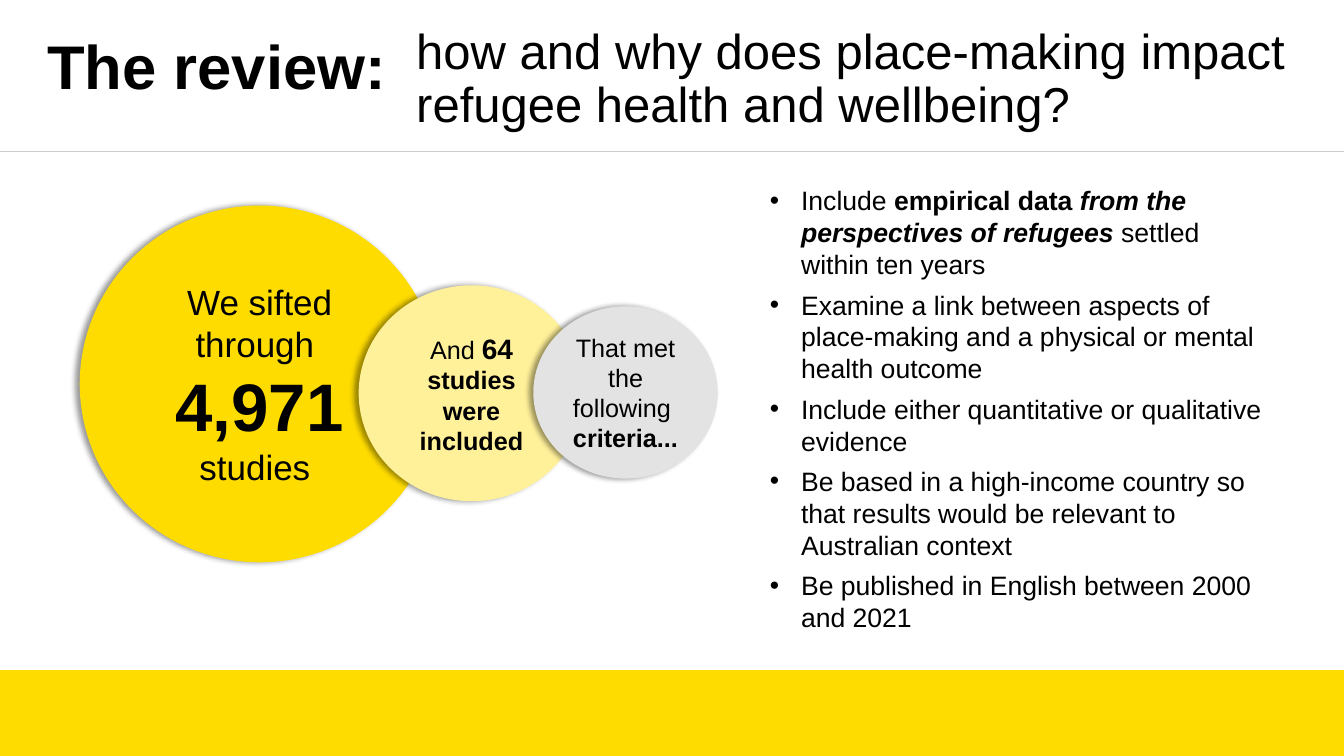
"""Build the slide that sums up how the review's studies were selected."""
from dataclasses import dataclass

import pptx
import pptx.dml.color
import pptx.enum.shapes
import pptx.enum.text
import pptx.oxml
import pptx.oxml.ns
import pptx.util
from pptx.util import Cm

ALIGN = pptx.enum.text.PP_ALIGN
ANCHOR = pptx.enum.text.MSO_ANCHOR
SHAPE = pptx.enum.shapes.MSO_SHAPE


@dataclass(frozen=True)
class Theme:
    """Colours and type sizes of the slide."""
    font: str = "Arial"
    text: str = "000000"
    yellow: str = "FFDC00"
    pale_yellow: str = "FFF199"
    grey: str = "E3E3E3"
    rule: str = "CCCCCC"
    title: int = 44
    subtitle: int = 35
    total: int = 48
    total_gap: int = 36
    large: int = 25
    count: int = 20
    small: int = 18
    body: int = 19


THEME = Theme()
WIDTH, HEIGHT = Cm(33.87), Cm(19.05)
BAND_HEIGHT = Cm(2.16)
RULE_TOP = Cm(3.81)


def colour(value):
    """Turn a hex string into a colour."""
    return pptx.dml.color.RGBColor.from_string(value)


def add_child(parent, tag, xml=""):
    """Append a drawing element with optional inner markup."""
    name = tag.split()[0]
    parent.append(pptx.oxml.parse_xml(
        f'<a:{tag} {pptx.oxml.ns.nsdecls("a")}>{xml}</a:{name}>'))


def add_bullet(paragraph, indent):
    """Give a paragraph a round bullet with a hanging indent."""
    properties = paragraph._p.get_or_add_pPr()
    properties.set("marL", str(indent))
    properties.set("indent", str(-indent))
    add_child(properties, 'buFont typeface="Arial"')
    add_child(properties, 'buChar char="•"')


def write_text(shape, paragraphs, size, bold=False, align=ALIGN.LEFT,
               anchor=ANCHOR.MIDDLE, line_spacing=None, space_before=0, bullet_indent=None):
    """Fill a shape with paragraphs, each a list of (text, format) runs."""
    frame = shape.text_frame
    frame.word_wrap = True
    frame.vertical_anchor = anchor
    for index, runs in enumerate(paragraphs):
        paragraph = frame.paragraphs[0] if index == 0 else frame.add_paragraph()
        paragraph.alignment = align
        if line_spacing:
            paragraph.line_spacing = line_spacing
        if index and space_before:
            paragraph.space_before = pptx.util.Pt(space_before)
        if bullet_indent:
            add_bullet(paragraph, bullet_indent)
        for text, style in runs:
            run = paragraph.add_run()
            run.text = text
            run.font.name = THEME.font
            run.font.size = pptx.util.Pt(style.get("size", size))
            run.font.bold = style.get("bold", bold)
            run.font.italic = style.get("italic", False)
            run.font.color.rgb = colour(THEME.text)


def add_text(slide, left, top, width, height, paragraphs, **text_format):
    """Place a text box."""
    box = slide.shapes.add_textbox(left, top, width, height)
    write_text(box, paragraphs, **text_format)


def add_solid(slide, kind, left, top, width, height, fill):
    """Place a filled shape without an outline or shadow."""
    shape = slide.shapes.add_shape(kind, left, top, width, height)
    shape.shadow.inherit = False
    shape.fill.solid()
    shape.fill.fore_color.rgb = colour(fill)
    shape.line.fill.background()
    return shape


def add_circle(slide, left, top, width, height, fill, paragraphs, size):
    """Place a circle with centred text and a soft shadow to its left."""
    circle = add_solid(slide, SHAPE.OVAL, left, top, width, height, fill)
    effects = circle._element.spPr.find(pptx.oxml.ns.qn("a:effectLst"))
    add_child(effects, f'outerShdw blurRad="{pptx.util.Pt(4)}" dist="{pptx.util.Pt(3)}" '
              'dir="10800000" algn="r" rotWithShape="0"',
              '<a:srgbClr val="000000"><a:alpha val="40000"/></a:srgbClr>')
    write_text(circle, paragraphs, size=size, align=ALIGN.CENTER)


def add_rule(slide, top):
    """Draw a thin line across the slide."""
    rule = slide.shapes.add_connector(
        pptx.enum.shapes.MSO_CONNECTOR.STRAIGHT, 0, top, WIDTH, top)
    rule.line.color.rgb = colour(THEME.rule)
    rule.line.width = pptx.util.Pt(0.75)
    add_child(rule._element.spPr, "effectLst")


def add_heading(slide):
    """Place the title, the review question and the rule below them."""
    add_text(slide, Cm(0.94), Cm(0.66), Cm(9.5), Cm(2.18), [[("The review:", {})]],
             size=THEME.title, bold=True, line_spacing=0.9)
    add_rule(slide, RULE_TOP)
    question = "how and why does place-making impact refugee health and wellbeing?"
    add_text(slide, Cm(10.24), Cm(0.18), Cm(23.24), Cm(3.68), [[(question, {})]],
             size=THEME.subtitle, line_spacing=0.9)


def add_funnel(slide):
    """Place the three overlapping circles of the selection."""
    bold = {"bold": True}
    sifted = [[("We sifted through ", {})],
              [("4,971", {"size": THEME.total, "bold": True}),
               (" ", {"size": THEME.total_gap, "bold": True}), ("studies ", {})]]
    included = [[("And ", {}), ("64", {"size": THEME.count, "bold": True}),
                 (" ", {}), ("studies", bold)],
                [("were included", bold)]]
    criteria = [[("That met the following ", {})], [("criteria...", bold)]]
    add_circle(slide, Cm(2.01), Cm(5.18), Cm(9.07), Cm(8.99), THEME.yellow, sifted, THEME.large)
    add_circle(slide, Cm(9.04), Cm(7.19), Cm(5.69), Cm(5.44), THEME.pale_yellow,
               included, THEME.small)
    add_circle(slide, Cm(13.44), Cm(7.72), Cm(4.65), Cm(4.34), THEME.grey, criteria, THEME.small)


def add_criteria(slide):
    """Place the bulleted list of inclusion criteria."""
    criteria = [
        [("Include ", {}), ("empirical data ", {"bold": True}),
         ("from the perspectives of refugees ", {"bold": True, "italic": True}),
         ("settled within ten years", {})],
        [("Examine a link between aspects of place-making and a physical or mental "
          "health outcome", {})],
        [("Include either quantitative or qualitative evidence", {})],
        [("Be based in a high-income country so that results would be relevant to "
          "Australian context", {})],
        [("Be published in English between 2000 and 2021", {})],
    ]
    add_text(slide, Cm(19.15), Cm(4.52), Cm(13.06), Cm(12), criteria, size=THEME.body,
             anchor=ANCHOR.TOP, space_before=6, bullet_indent=Cm(0.79))


def main():
    """Build and save the presentation."""
    presentation = pptx.Presentation()
    presentation.slide_width, presentation.slide_height = WIDTH, HEIGHT
    slide = presentation.slides.add_slide(presentation.slide_layouts[6])
    add_solid(slide, SHAPE.RECTANGLE, 0, HEIGHT - BAND_HEIGHT, WIDTH, BAND_HEIGHT, THEME.yellow)
    add_heading(slide)
    add_funnel(slide)
    add_criteria(slide)
    presentation.save("out.pptx")


if __name__ == "__main__":
    main()
